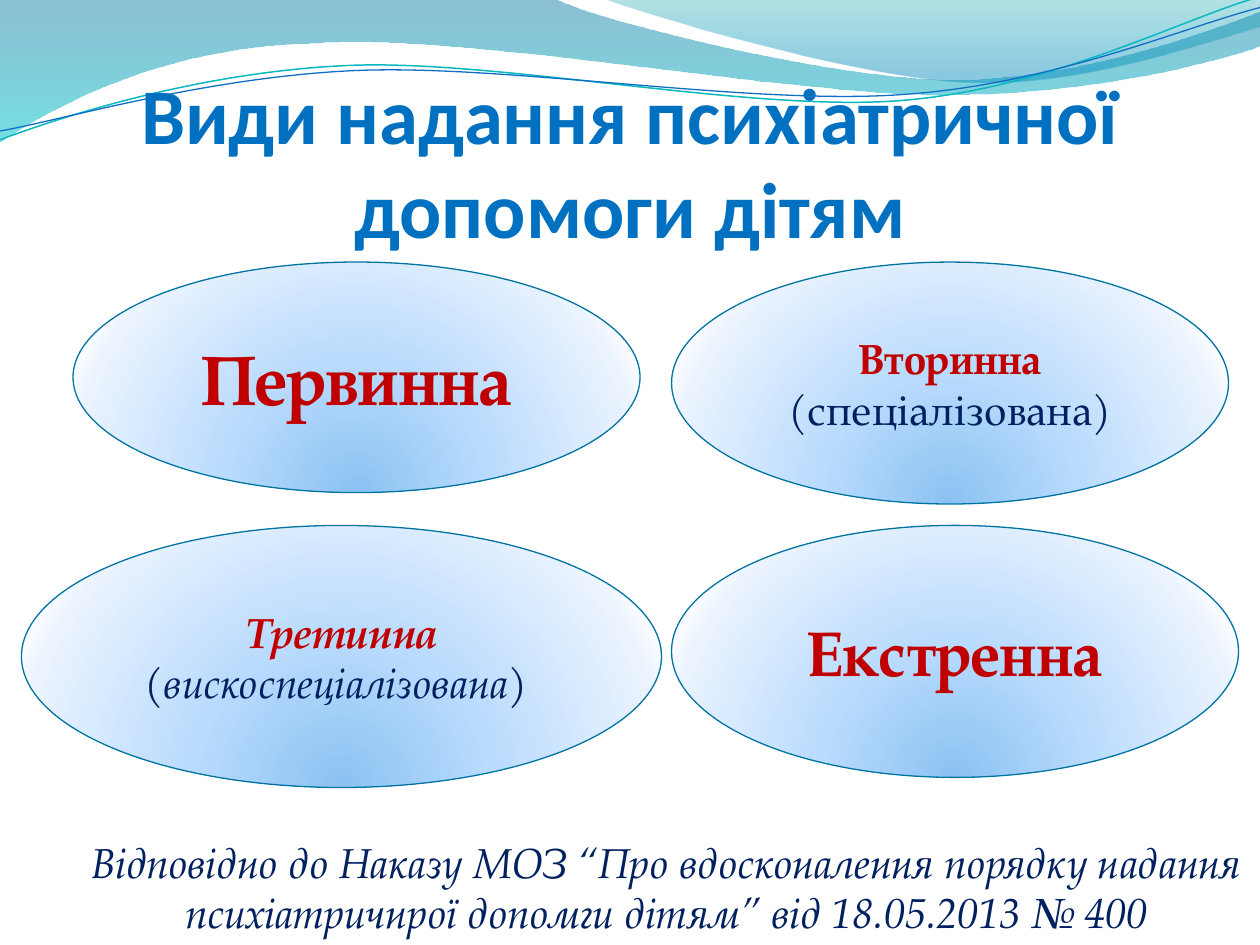
from lxml import etree
from pptx import Presentation
from pptx.dml.color import RGBColor
from pptx.enum import shapes, text
from pptx.oxml import parse_xml
from pptx.oxml.ns import nsdecls, qn
from pptx.util import Inches, Pt

TITLE_BLUE = RGBColor(0x00, 0x70, 0xC0)
RED = RGBColor(0xC0, 0x00, 0x00)
NAVY = RGBColor(0x00, 0x20, 0x60)
OUTLINE = RGBColor(0x00, 0x74, 0xA1)
TEAL = RGBColor(0x0A, 0xB8, 0xBF)
BLUE = RGBColor(0x0F, 0x6F, 0xC6)
AQUA = RGBColor(0x00, 0xC6, 0xCF)
SEA = RGBColor(0x00, 0xA1, 0xA9)
SKY = RGBColor(0x00, 0x8B, 0xBF)
OVAL_STOPS = [
    (0, RGBColor(0x8B, 0xC2, 0xF1), 100),
    (43, RGBColor(0xB9, 0xDB, 0xFD), 100),
    (93, RGBColor(0xEA, 0xF3, 0xFE), 100),
    (100, RGBColor(0xF8, 0xFB, 0xFF), 100),
]
DOWNWARD = '<a:lin ang="5400000" scaled="0"/>'
FROM_BELOW = ('<a:path path="circle"><a:fillToRect l="50000" t="130000" '
              'r="50000" b="-30000"/></a:path>')
HEADING_FONT = "Calibri"
BODY_FONT = "TeX Gyre Pagella"


def stop_xml(position, colour, opacity):
    alpha = f'<a:alpha val="{opacity * 1000}"/>' if opacity < 100 else ""
    return (f'<a:gs pos="{position * 1000}"><a:srgbClr val="{colour}">'
            f'{alpha}</a:srgbClr></a:gs>')


def set_gradient(shape, stops, direction):
    """Fill with (position %, colour, opacity %) stops."""
    stop_list = "".join(stop_xml(*stop) for stop in stops)
    gradient = parse_xml(f'<a:gradFill {nsdecls("a")} rotWithShape="1">'
                         f'<a:gsLst>{stop_list}</a:gsLst>{direction}</a:gradFill>')
    shape.fill.background()
    properties = shape.element.spPr
    properties.replace(properties.find(qn("a:noFill")), gradient)


def add_outline(slide, start, segments, close):
    """Draw segments of one point (a line) or three points (a cubic curve)."""
    builder = slide.shapes.build_freeform(*map(Inches, start))
    builder.add_line_segments(
        [tuple(map(Inches, point)) for segment in segments for point in segment],
        close=close)
    outline = builder.convert_to_shape()
    outline.shadow.inherit = False

    steps = iter(list(outline.element.spPr.iter(qn("a:lnTo"))))
    for segment in segments:
        parts = [next(steps) for _ in segment]
        if len(parts) == 3:
            curve = etree.Element(qn("a:cubicBezTo"))
            parts[0].addprevious(curve)
            for part in parts:
                curve.append(part[0])
                part.getparent().remove(part)
    return outline


def add_band(slide, start, segments, stops):
    band = add_outline(slide, start, segments, True)
    set_gradient(band, stops, DOWNWARD)
    band.line.fill.background()


def add_wave_line(slide, start, segments, colour, width):
    wave = add_outline(slide, start, segments, False)
    wave.fill.background()
    wave.line.color.rgb = colour
    wave.line.width = Pt(width)


def add_header_waves(slide):
    add_band(slide, (0, 0), [
        [(4.4, -0.01)],
        [(4.76, 0.17), (6.64, 0.63), (7.58, 0.63)],
        [(8.53, 0.63), (9.58, 0.26), (10, 0.09)],
        [(10.01, 0.36)],
        [(9.83, 0.44), (8.7, 0.76), (7.46, 0.75)],
        [(6.22, 0.75), (3.82, 0.28), (2.57, 0.34)],
        [(1.29, 0.36), (0.46, 0.83), (-0.01, 1.13)],
    ], [(0, OUTLINE, 45), (100, AQUA, 55)])
    add_band(slide, (4.79, -0.01), [
        [(5.09, 0.11), (6.82, 0.62), (7.69, 0.65)],
        [(8.56, 0.69), (9.61, 0.32), (10, 0.21)],
        [(10, 0)],
    ], [(0, SEA, 30), (80, SKY, 45)])
    add_wave_line(slide, (0, 1.11), [
        [(0.48, 0.93), (1.58, 0.57), (2.77, 0.52)],
        [(3.95, 0.47), (5.93, 0.89), (7.13, 0.8)],
        [(8.33, 0.71), (9.38, 0.15), (9.98, -0.02)],
    ], TEAL, 0.85)
    add_wave_line(slide, (0, 1.04), [
        [(0.47, 0.96), (1.64, 0.61), (2.83, 0.56)],
        [(4.03, 0.51), (5.97, 0.84), (7.17, 0.75)],
        [(8.36, 0.67), (9.41, 0.21), (10, 0.06)],
    ], BLUE, 0.75)


def add_run(paragraph, wording, font, size, colour, bold=False, italic=False):
    run = paragraph.add_run()
    run.text = wording
    run.font.name = font
    run.font.size = Pt(size)
    run.font.color.rgb = colour
    run.font.bold = bold
    run.font.italic = italic


def centred_paragraph(shape, anchor):
    frame = shape.text_frame
    frame.word_wrap = True
    frame.vertical_anchor = anchor
    paragraph = frame.paragraphs[0]
    paragraph.alignment = text.PP_ALIGN.CENTER
    return paragraph


def add_title(slide, left, top, width, height):
    title = slide.shapes.add_textbox(*map(Inches, (left, top, width, height)))
    frame = title.text_frame
    frame.margin_left = frame.margin_right = frame.margin_bottom = 0
    add_run(centred_paragraph(title, text.MSO_ANCHOR.BOTTOM),
            "Види надання психіатричної допомоги дітям",
            HEADING_FONT, 45, TITLE_BLUE, bold=True)


def add_care_level(slide, box, name, size, detail="", italic=False):
    oval = slide.shapes.add_shape(shapes.MSO_SHAPE.OVAL, *map(Inches, box))
    oval.shadow.inherit = False
    set_gradient(oval, OVAL_STOPS, FROM_BELOW)
    oval.line.color.rgb = OUTLINE
    oval.line.width = Pt(0.75)
    paragraph = centred_paragraph(oval, text.MSO_ANCHOR.MIDDLE)
    add_run(paragraph, name, BODY_FONT, size, RED, bold=True, italic=italic)
    if detail:
        add_run(paragraph, detail, BODY_FONT, size, NAVY, italic=italic)


def add_source_note(slide, left, top, width, height):
    note = slide.shapes.add_textbox(*map(Inches, (left, top, width, height)))
    note.text_frame.auto_size = text.MSO_AUTO_SIZE.SHAPE_TO_FIT_TEXT
    add_run(centred_paragraph(note, text.MSO_ANCHOR.TOP),
            "Відповідно до Наказу МОЗ “Про вдосконалення порядку надання "
            "психіатричнрої допомги дітям” від 18.05.2013 № 400",
            BODY_FONT, 24, NAVY, italic=True)


def main():
    deck = Presentation()
    deck.slide_width, deck.slide_height = Inches(10), Inches(7.5)
    slide = deck.slides.add_slide(deck.slide_layouts[6])
    add_header_waves(slide)
    add_title(slide, 0.5, 0.77, 9, 1.25)

    first_row, second_row, right_column = 2.08, 4.17, 5.33
    add_care_level(slide, (0.58, first_row, 4.5, 1.83), "Первинна", 40)
    add_care_level(slide, (0.17, second_row, 5.08, 2.08), "Третинна ", 24,
                   "(вискоспеціалізована) ", italic=True)
    add_care_level(slide, (right_column, second_row, 4.5, 2), "Екстренна", 36)
    add_care_level(slide, (right_column, first_row, 4.42, 1.92), "Вторинна ", 24,
                   "(спеціалізована)")
    add_source_note(slide, 0.58, 6.59, 9.42, 0.91)
    deck.save("out.pptx")


if __name__ == "__main__":
    main()
